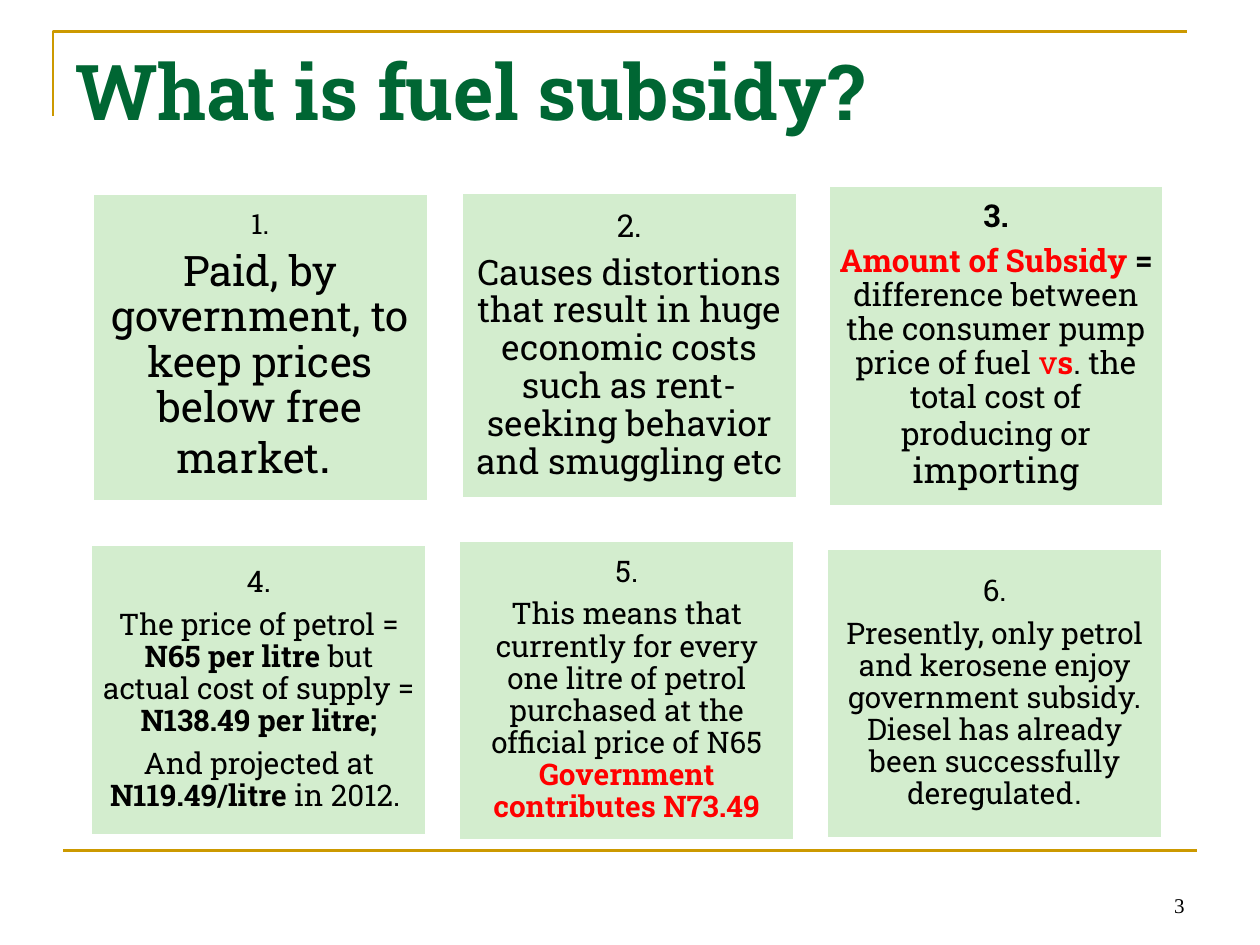
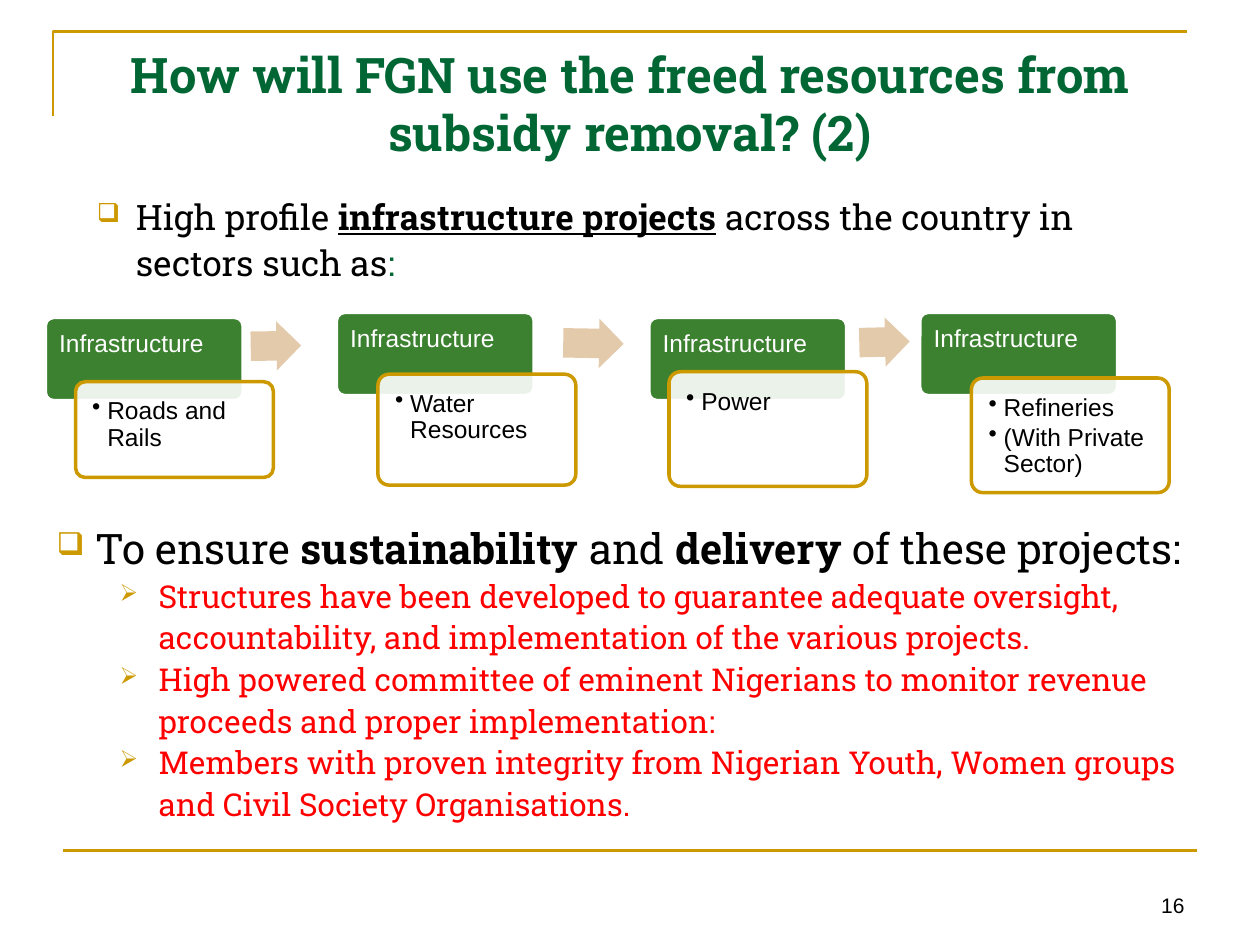
import pptx
import pptx.util
import pptx.dml.color
import pptx.enum.shapes
import pptx.enum.text
import pptx.oxml.ns
from dataclasses import dataclass
from lxml import etree

Inches, Pt = pptx.util.Inches, pptx.util.Pt
Kind = pptx.enum.shapes.MSO_SHAPE
Align = pptx.enum.text.PP_ALIGN
Anchor = pptx.enum.text.MSO_ANCHOR
qn = pptx.oxml.ns.qn


@dataclass(frozen=True)
class Theme:
    gold: str = "CC9900"
    title: str = "006633"
    black: str = "000000"
    red: str = "FF0000"
    white: str = "FFFFFF"
    mint: str = "D3EDCE"
    green: str = "3B812F"
    sand: str = "E2CAAB"
    slab: str = "Roboto Slab"
    sans: str = "Arial"
    serif: str = "Times New Roman"
    big: int = 44
    head: int = 28
    lead: int = 24
    body: int = 20
    sub: int = 18
    step: int = 14
    page: int = 12


T = Theme()

# A run is (text, marks, size); marks: b bold, u underline, r red, g green, a Arial.
# A card is (left, top, height), text size, number size, paragraphs of runs.
CARDS = [
    ((0.73, 1.53, 2.45), 24, 16, [
        [("1.", "", 16)],
        [("Paid, by government, to keep prices below free market",), (". ", "", 28)]]),
    ((3.66, 1.53, 2.43), 20, 18, [
        [("2.", "", 18)],
        [("Causes distortions that result in huge economic costs such as "
          "rent-seeking behavior and smuggling etc",)]]),
    ((6.57, 1.47, 2.55), 18, 18, [
        [("3.", "b")],
        [("Amount of Subsidy ", "br"), ("= ", "b"),
         ("difference between the consumer pump price of fuel ",),
         ("v", "r"), ("s", "br"), (". the total cost of producing or",),
         (" importing", "", 20)]]),
    ((0.72, 4.32, 2.31), 17, 17, [
        [("4.",)],
        [("The price of petrol = ",), ("N65 per litre ", "b"),
         ("but actual cost of supply = ",), ("N138.49 per litre;", "b")],
        [("And projected at ",), ("N119.49/litre", "b"), (" in 2012. ",)]]),
    ((3.64, 4.29, 2.38), 17, 17, [
        [("5.",)],
        [("This means that currently for every one litre of petrol purchased "
          "at the official price of N65 ",),
         ("Government contributes N73.49", "br")]]),
    ((6.56, 4.35, 2.31), 17, 17, [
        [("6.",)],
        [("Presently, only petrol and kerosene enjoy government subsidy. "
          "Diesel has already been successfully deregulated",), (".", "a")]]),
]
CARD_W = 2.67

# A step is the tab's left and top, the note's left, top and height, and its points.
STEPS = [
    ((0.36, 2.52), (0.6, 3.03, 0.76), ["Roads and Rails"]),
    ((2.67, 2.48), (3, 2.97, 0.88), ["Water Resources"]),
    ((5.15, 2.52), (5.31, 2.95, 0.91), ["Power"]),
    ((7.3, 2.48), (7.71, 3, 0.91), ["Refineries", "(With Private Sector)"]),
]
STEP_W = 1.57
TAB_H = 0.66
ARROWS = [(1.99, 2.55, 0.4, -0.9), (4.47, 2.53, 0.48, 0.9), (6.82, 2.52, 0.4, -1.3)]

INTRO = [("High profile ",), ("infrastructure projects", "bu"),
         (" across the country in sectors such as",), (":", "g")]
ENSURE = [("To ensure ",), ("sustainability", "b"), (" and ",),
          ("delivery", "b"), (" of these projects:",)]
MEANS = [
    "Structures have been developed to guarantee adequate oversight, "
    "accountability, and implementation of the various projects.",
    "High powered committee of eminent Nigerians to monitor revenue "
    "proceeds and proper implementation:",
    "Members with proven integrity from Nigerian Youth, Women groups "
    "and Civil Society Organisations.",
]


def rgb(code):
    return pptx.dml.color.RGBColor.from_string(code)


def write(para, runs, size, font=T.slab, color=T.black, align=Align.LEFT,
          line=1.0, before=0, after=0):
    """Fill a paragraph; before and after are shares of the type size."""
    para.alignment, para.line_spacing = align, line
    para.space_before, para.space_after = Pt(size * before), Pt(size * after)
    for text, marks, own in ((*run, "", None)[:3] if len(run) == 1
                             else (*run, None)[:3] for run in runs):
        run = para.add_run()
        run.text = text
        face = run.font
        face.size = Pt(own or size)
        face.name = T.sans if "a" in marks else font
        face.bold, face.underline = "b" in marks, "u" in marks
        tint = T.red if "r" in marks else T.title if "g" in marks else color
        face.color.rgb = rgb(tint)


def mark(para, char, left, hang, color=None, share=None):
    """Give a paragraph a bullet with a hanging indent."""
    props = para._p.get_or_add_pPr()
    props.set("marL", str(Inches(left)))
    props.set("indent", str(-Inches(hang)))
    if color:
        tint = etree.SubElement(props, qn("a:buClr"))
        etree.SubElement(tint, qn("a:srgbClr"), val=color)
    if share:
        etree.SubElement(props, qn("a:buSzPct"), val=str(share * 1000))
    etree.SubElement(props, qn("a:buChar"), char=char)


def setup(frame, inset=None, anchor=Anchor.TOP):
    frame.word_wrap, frame.vertical_anchor = True, anchor
    if inset is not None:
        frame.margin_left = frame.margin_right = Inches(inset)
        frame.margin_top = frame.margin_bottom = Inches(inset)
    return frame


def paras(frame, count):
    return [frame.paragraphs[0]] + [frame.add_paragraph() for _ in range(count - 1)]


def box(slide, place, anchor=Anchor.TOP):
    return setup(slide.shapes.add_textbox(*map(Inches, place)).text_frame, anchor=anchor)


def block(slide, kind, place, fill, line=None, adj=()):
    shape = slide.shapes.add_shape(kind, *map(Inches, place))
    shape.shadow.inherit = False
    shape.fill.solid()
    shape.fill.fore_color.rgb = rgb(fill)
    if line:
        shape.line.color.rgb, shape.line.width = rgb(line), Pt(2)
    else:
        shape.line.fill.background()
    for spot, value in enumerate(adj):
        shape.adjustments[spot] = value
    return shape


def base(deck, title, size, high, align, page, font):
    """Add a slide with its gold rules, title and page number."""
    slide = deck.slides.add_slide(deck.slide_layouts[6])
    pen = slide.shapes.build_freeform(Inches(0.42), Inches(0.92))
    pen.add_line_segments([(Inches(0.42), Inches(0.25)), (Inches(9.42), Inches(0.25))],
                          close=False)
    frame = pen.convert_to_shape()
    frame.shadow.inherit = False
    frame.fill.background()
    rule = slide.shapes.add_connector(pptx.enum.shapes.MSO_CONNECTOR.STRAIGHT,
                                      *map(Inches, (0.5, 6.75, 9.5, 6.75)))
    etree.SubElement(rule._element.spPr, qn("a:effectLst"))
    for part in (frame, rule):
        part.line.color.rgb, part.line.width = rgb(T.gold), Pt(1.5)
    head = box(slide, (0.5, 0.3, 9, high))
    write(head.paragraphs[0], [(title, "b")], size, color=T.title, align=align)
    foot = box(slide, (7.17, 6.83, 2.33, 0.5), Anchor.BOTTOM)
    write(foot.paragraphs[0], [(page,)], T.page, font, align=Align.RIGHT)
    return slide


def cards(deck):
    slide = base(deck, "What is fuel subsidy?", T.big, 0.93, Align.LEFT, "3", T.serif)
    for (left, top, high), size, first, texts in CARDS:
        card = block(slide, Kind.RECTANGLE, (left, top, CARD_W, high), T.mint, T.white)
        frame = setup(card.text_frame, 0.07, Anchor.MIDDLE)
        for spot, (para, runs) in enumerate(zip(paras(frame, len(texts)), texts)):
            write(para, runs, size if spot else first, align=Align.CENTER,
                  line=0.9, after=0.35)


def steps(slide):
    for (left, top), (x, y, high), points in STEPS:
        tab = block(slide, Kind.ROUNDED_RECTANGLE, (left, top, STEP_W, TAB_H),
                    T.green, T.white, [0.1])
        frame = setup(tab.text_frame, 0.09)
        write(frame.paragraphs[0], [("Infrastructure",)], T.step, T.sans, T.white,
              line=0.9, after=0.35)
        note = block(slide, Kind.ROUNDED_RECTANGLE, (x, y, STEP_W, high),
                     T.white, T.gold, [0.1])
        tint = note._element.spPr.find(qn("a:solidFill")).find(qn("a:srgbClr"))
        etree.SubElement(tint, qn("a:alpha"), val="90000")
        frame = setup(note.text_frame, 0.11)
        for para, point in zip(paras(frame, len(points)), points):
            write(para, [(point,)], T.step, T.sans, line=0.9, after=0.15)
            mark(para, "•", 0.12, 0.12)
    for left, top, wide, turn in ARROWS:
        arrow = block(slide, Kind.RIGHT_ARROW, (left, top, wide, 0.39), T.sand,
                      adj=[0.6, 0.5])
        arrow.rotation = turn


def plan(deck):
    slide = base(deck, "How will FGN use the freed resources from subsidy removal? (2)",
                 T.head, 1.08, Align.CENTER, "16", T.sans)
    steps(slide)
    intro = box(slide, (0.67, 1.47, 8.35, 0.84)).paragraphs[0]
    lead, *rest = paras(box(slide, (0.35, 4.06, 9.21, 2.55)), 1 + len(MEANS))
    for para, runs, size in ((intro, INTRO, T.body), (lead, ENSURE, T.lead)):
        write(para, runs, size, line=1.1, before=0.2)
        mark(para, "❑", 0.31, 0.31, T.gold, 75)
    for para, text in zip(rest, MEANS):
        write(para, [(text, "r")], T.sub, line=1.1)
        mark(para, "➢", 0.81, 0.31, T.gold, 75)


def main():
    deck = pptx.Presentation()
    deck.slide_width, deck.slide_height = Inches(10), Inches(7.5)
    cards(deck)
    plan(deck)
    deck.save("out.pptx")


if __name__ == "__main__":
    main()
